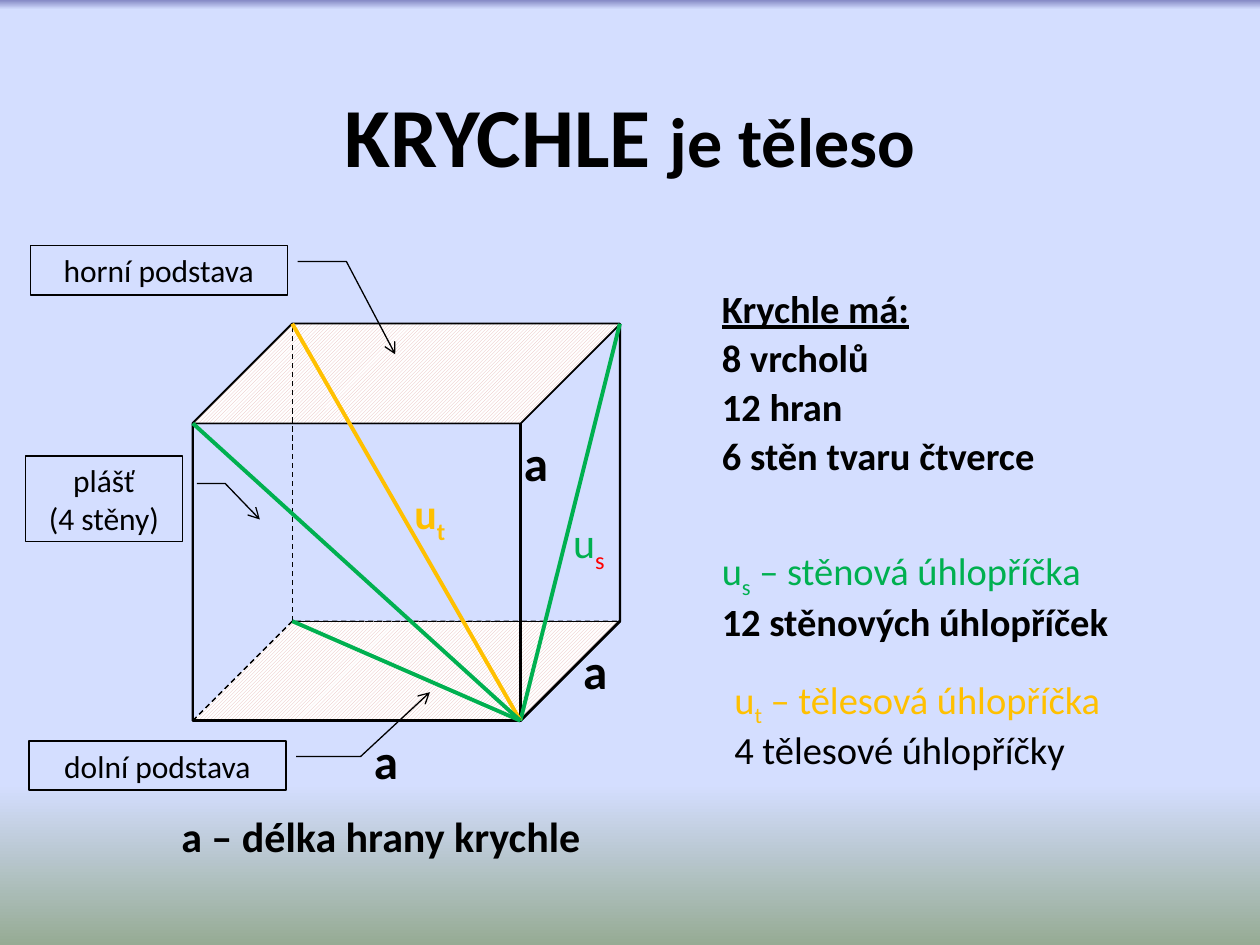
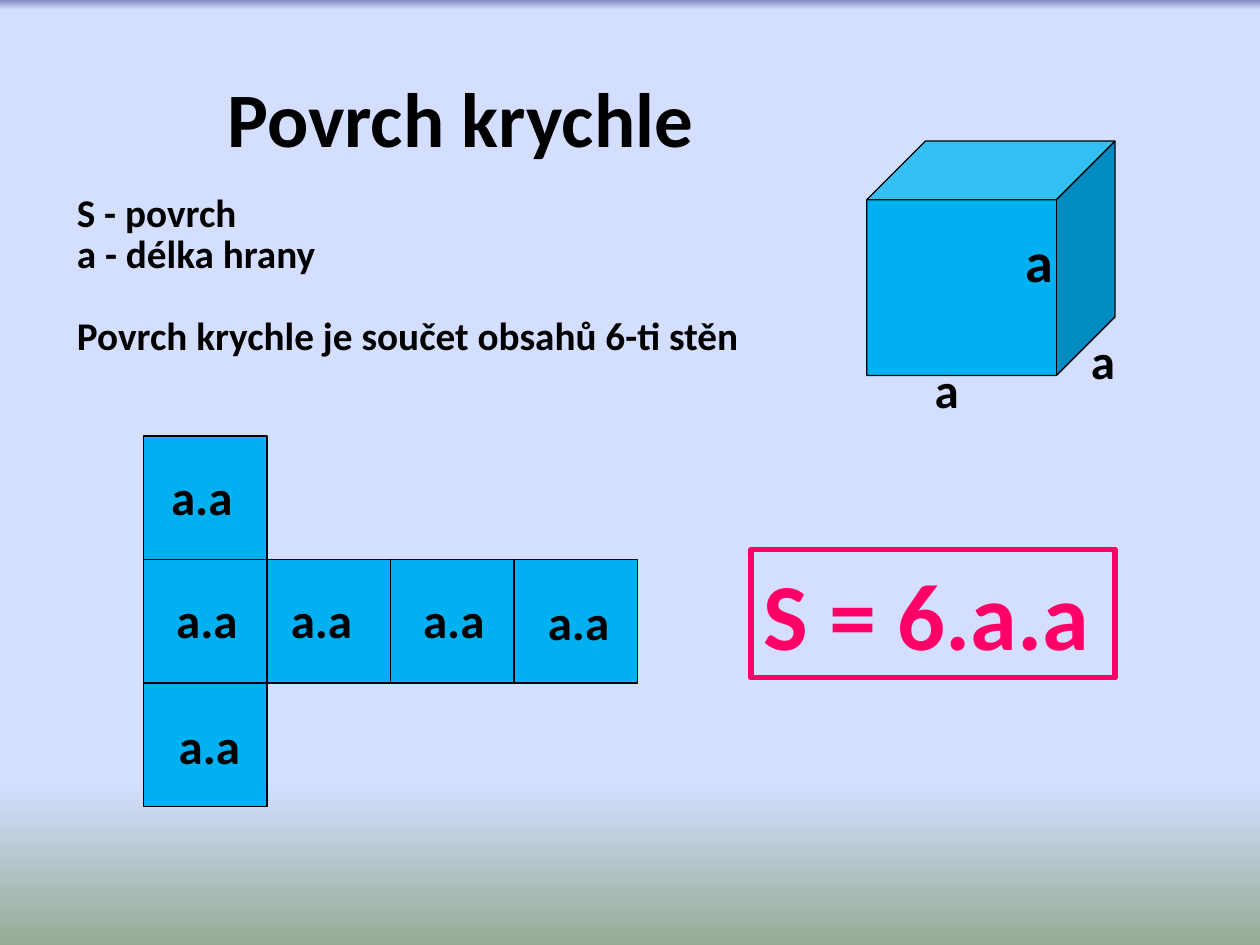
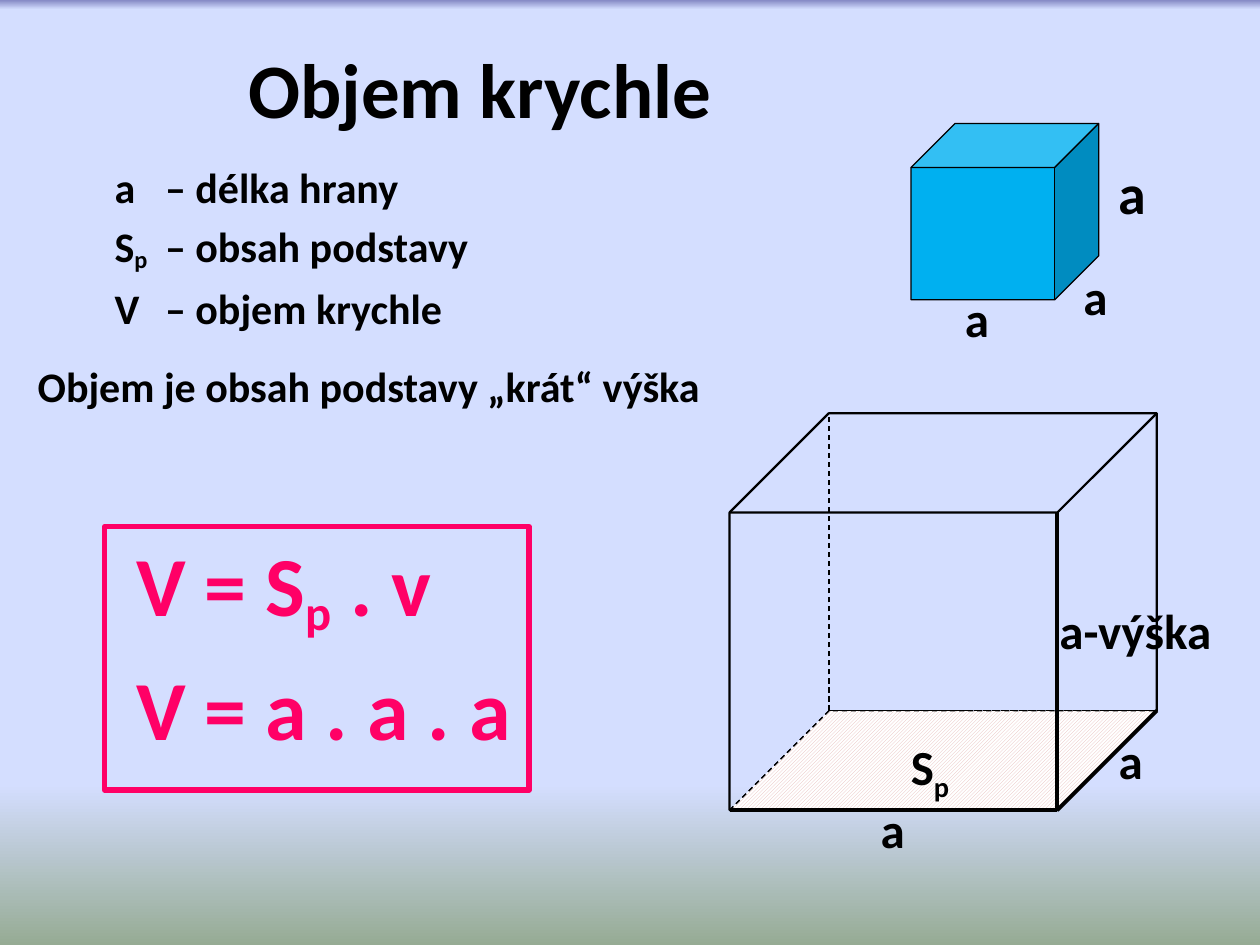
from dataclasses import dataclass
from typing import Optional

import pptx
import pptx.dml.color
import pptx.enum.dml
import pptx.enum.shapes
import pptx.enum.text
import pptx.oxml
import pptx.oxml.ns
import pptx.util
from pptx.util import Inches

SHAPE = pptx.enum.shapes.MSO_SHAPE
ALIGN = pptx.enum.text.PP_ALIGN
ANCHOR = pptx.enum.text.MSO_ANCHOR


@dataclass(frozen=True)
class Theme:
    font: str = "Calibri"
    black: str = "000000"
    white: str = "FFFFFF"
    green: str = "00B050"
    amber: str = "FFC000"
    red: str = "FF0000"
    pink: str = "FF0066"
    blue: str = "00B0F0"
    hatch: str = "E6B9B8"
    backdrop: tuple = ((0, "8488C4"), (1, "D4DEFF"), (83, "D4DEFF"), (100, "96AB94"))
    title: float = 44
    title_large: float = 48
    title_small: float = 40
    surface_formula: float = 54
    volume_formula: float = 48
    height_label: float = 32
    label: float = 28
    text: float = 24
    surface_text: float = 22.4
    facts: float = 22
    callout: float = 18
    thin: float = 0.75
    edge: float = 1.25
    strong: float = 1.5
    heavy: float = 2.25
    frame: float = 3


@dataclass(frozen=True)
class Span:
    text: str
    size: Optional[float] = None
    color: Optional[str] = None
    bold: Optional[bool] = None
    underline: bool = False
    baseline: int = 0


def rgb(value):
    return pptx.dml.color.RGBColor.from_string(value)


class Lesson:
    def __init__(self, theme):
        self.theme = theme
        self.deck = pptx.Presentation()
        self.deck.slide_width, self.deck.slide_height = Inches(10), Inches(7.5)
        self.slide = None
        self.paint_backdrop()

    def paint_backdrop(self):
        master = self.deck.slide_master
        fill = master.background.fill
        fill.gradient()
        fill.gradient_angle = 270
        stops = master.element.xpath("p:cSld/p:bg//a:gsLst")[0]
        for stop in list(stops):
            stops.remove(stop)
        for percent, color in self.theme.backdrop:
            stops.append(pptx.oxml.parse_xml(
                f'<a:gs {pptx.oxml.ns.nsdecls("a")} pos="{percent * 1000}">'
                f'<a:srgbClr val="{color}"/></a:gs>'))

    def new_slide(self):
        self.slide = self.deck.slides.add_slide(self.deck.slide_layouts[1])

    def place(self, box, at):
        box.left, box.top, box.width, box.height = (Inches(value) for value in at)
        return box

    def typeset(self, box, paragraphs, size, color=None, bold=True, spacing=0.9,
                before=0.2, align=ALIGN.LEFT, anchor=ANCHOR.TOP, hanging=0):
        frame = box.text_frame
        frame.word_wrap = True
        frame.auto_size = pptx.enum.text.MSO_AUTO_SIZE.NONE
        frame.vertical_anchor = anchor
        for index, content in enumerate(paragraphs):
            para = frame.add_paragraph() if index else frame.paragraphs[0]
            para.alignment = align
            para.line_spacing = spacing
            para.space_before = pptx.util.Pt(before * size)
            properties = para._p.get_or_add_pPr()
            properties.set("marL", str(Inches(hanging)))
            properties.set("indent", str(-Inches(hanging)))
            properties.append(pptx.oxml.parse_xml(
                f'<a:buNone {pptx.oxml.ns.nsdecls("a")}/>'))
            for span in [Span(content)] if isinstance(content, str) else content:
                run = para.add_run()
                run.text = span.text
                run.font.name = self.theme.font
                run.font.size = pptx.util.Pt(span.size or size)
                run.font.bold = bold if span.bold is None else span.bold
                run.font.underline = span.underline
                run.font.color.rgb = rgb(span.color or color or self.theme.black)
                if span.baseline:
                    run.font._element.set("baseline", str(span.baseline * 1000))
        return box

    def title(self, at, content):
        box = self.place(self.slide.shapes.title, at)
        self.typeset(box, [content], self.theme.title, spacing=1, before=0,
                     align=ALIGN.CENTER, anchor=ANCHOR.MIDDLE)

    def body(self, at, paragraphs, size, **style):
        box = self.place(self.slide.placeholders[1], at)
        return self.typeset(box, paragraphs, size, **style)

    def text(self, at, paragraphs, size, **style):
        box = self.slide.shapes.add_textbox(*(Inches(value) for value in at))
        return self.typeset(box, paragraphs, size, **style)

    def edge_labels(self, places, width, height, size):
        for left, top in places:
            self.text((left, top, width, height), ["a"], size)

    def shape(self, kind, at, width, fill=None, color=None, adjustments=()):
        shape = self.slide.shapes.add_shape(kind, *(Inches(value) for value in at))
        shape.shadow.inherit = False
        for index, value in enumerate(adjustments):
            shape.adjustments[index] = value
        if fill:
            shape.fill.solid()
            shape.fill.fore_color.rgb = rgb(fill)
        else:
            shape.fill.background()
        shape.line.color.rgb = rgb(color or self.theme.black)
        shape.line.width = pptx.util.Pt(width)
        return shape

    def hatched_face(self, at, slant, dashed=False):
        face = self.shape(SHAPE.PARALLELOGRAM, at, self.theme.thin, adjustments=[slant])
        face.fill.patterned()
        face.fill.pattern = pptx.enum.dml.MSO_PATTERN.LIGHT_UPWARD_DIAGONAL
        face.fill.fore_color.rgb = rgb(self.theme.hatch)
        face.fill.back_color.rgb = rgb(self.theme.white)
        if dashed:
            face.line.dash_style = pptx.enum.dml.MSO_LINE.DASH

    def line(self, start, end, width, color=None, dashed=False):
        line = self.slide.shapes.add_connector(
            pptx.enum.shapes.MSO_CONNECTOR.STRAIGHT,
            *(Inches(value) for value in (*start, *end)))
        line.line.color.rgb = rgb(color or self.theme.black)
        line.line.width = pptx.util.Pt(width)
        if dashed:
            line.line.dash_style = pptx.enum.dml.MSO_LINE.DASH
        line.element.spPr.append(pptx.oxml.parse_xml(
            f'<a:effectLst {pptx.oxml.ns.nsdecls("a")}/>'))

    def callout(self, at, paragraphs, adjustments):
        box = self.shape(SHAPE.LINE_CALLOUT_2, at, self.theme.thin, adjustments=adjustments)
        box.element.spPr.get_or_add_ln().append(pptx.oxml.parse_xml(
            f'<a:tailEnd {pptx.oxml.ns.nsdecls("a")} type="arrow"/>'))
        self.typeset(box, paragraphs, self.theme.callout, bold=False, spacing=1, before=0,
                     align=ALIGN.CENTER, anchor=ANCHOR.MIDDLE)

    def formula(self, at, paragraphs, size, inset=0.1):
        box = self.shape(SHAPE.RECTANGLE, at, self.theme.frame, color=self.theme.pink)
        box.text_frame.margin_left = Inches(inset)
        self.typeset(box, paragraphs, size, color=self.theme.pink, spacing=1)

    def solid_cube(self, at):
        self.shape(SHAPE.CUBE, at, self.theme.thin, fill=self.theme.blue, adjustments=[0.25])

    def wire_cube(self, left, top, strong, hatched_top=False):
        width, height, depth = 3.39, 3.15, 0.79
        right, bottom = left + width, top + height
        front_right = right - depth
        corners = {
            "front_top_left": (left, top + depth),
            "front_top_right": (front_right, top + depth),
            "front_left": (left, bottom),
            "front_right": (front_right, bottom),
            "back_top_left": (left + depth, top),
            "back_top_right": (right, top),
            "back_left": (left + depth, bottom - depth),
            "back_right": (right, bottom - depth),
        }
        self.hatched_face((left, bottom - depth, width, depth), 1, dashed=True)
        self.shape(SHAPE.CUBE, (left, top, width, height), self.theme.edge, adjustments=[0.25])
        if hatched_top:
            self.hatched_face((left, top, width, depth), 1)
        for end in ("back_top_left", "back_right", "front_left"):
            self.line(corners["back_left"], corners[end], self.theme.thin, dashed=True)
        for end in ("front_top_right", "back_right", "front_left"):
            self.line(corners["front_right"], corners[end], strong)
        return corners


def build_solid(lesson):
    theme = lesson.theme
    lesson.new_slide()
    lesson.title((0.5, 0.44, 9, 1.25), [Span("KRYCHLE ", theme.title_large),
                                        Span("je těleso", theme.title_small)])
    corners = lesson.wire_cube(1.53, 2.57, theme.strong, hatched_top=True)
    for end, color in (("back_top_right", theme.green), ("back_top_left", theme.amber),
                       ("front_top_left", theme.green), ("back_left", theme.green)):
        lesson.line(corners["front_right"], corners[end], theme.heavy, color)
    lesson.callout((0.24, 1.95, 2.04, 0.39), ["horní podstava"],
                   (0.32, 1.04, 0.32, 1.23, 2.21, 1.42))
    lesson.callout((0.2, 3.62, 1.25, 0.68), ["plášť", "(4 stěny)"],
                   (0.32, 1.09, 0.32, 1.27, 0.74, 1.49))
    lesson.callout((0.23, 5.88, 2.04, 0.39), ["dolní podstava"],
                   (0.32, 1.04, 0.32, 1.29, -0.99, 1.56))
    lesson.edge_labels([(4.06, 3.44), (4.53, 5.09), (2.87, 5.8)], 0.47, 0.66, theme.label)
    lesson.text((1.34, 6.43, 3.62, 0.47), ["a – délka hrany krychle"], theme.text)
    lesson.text((4.45, 4.06, 0.63, 0.66),
                [[Span("u"), Span("s", color=theme.red, baseline=-25)]],
                theme.text, color=theme.green, bold=False)
    lesson.text((3.19, 3.83, 0.5, 0.66), [[Span("u"), Span("t", baseline=-25)]],
                theme.text, color=theme.amber)
    lesson.body((5.63, 2.25, 3.62, 1.65),
                [[Span("Krychle má:", underline=True)], "8 vrcholů", "12 hran",
                 "6 stěn tvaru čtverce"], theme.facts)
    for at, index, name, count, color, bold in (
            ((5.63, 4.3, 4.29, 1.12), "s", " – stěnová úhlopříčka",
             "12 stěnových úhlopříček", theme.green, True),
            ((5.73, 5.32, 4.29, 1.12), "t", " – tělesová úhlopříčka",
             "4 tělesové úhlopříčky", theme.amber, False)):
        lesson.text(at, [[Span("u"), Span(index, baseline=-25), Span(name)],
                         [Span(count, color=theme.black, bold=bold)]],
                    theme.facts, color=color, bold=False)


def build_surface(lesson):
    theme = lesson.theme
    lesson.new_slide()
    lesson.title((0.5, 0.3, 6.31, 1.25), "Povrch krychle")
    body = lesson.body((0.51, 1.55, 5.59, 1.66),
                       ["S - povrch", "a - délka hrany",
                        "Povrch krychle je součet obsahů 6-ti stěn"],
                       theme.surface_text, spacing=0.7)
    body.text_frame.paragraphs[-1].space_before = pptx.util.Pt(28)
    lesson.formula((5.96, 4.36, 2.89, 1.02), ["S = 6.a.a"], theme.surface_formula)

    side = 0.98
    net = [(0, 0), (0, 1), (0, 2), (1, 1), (2, 1), (3, 1)]
    for column, row in net:
        lesson.shape(SHAPE.RECTANGLE,
                     (1.14 + column * side, 3.46 + row * side, side, side),
                     theme.thin, fill=theme.blue)
    for left, top in ((1.26, 3.71), (1.3, 4.68), (1.32, 5.68),
                      (2.21, 4.68), (3.26, 4.68), (4.25, 4.7)):
        lesson.text((left, top, 0.83, 0.47), ["a.a"], theme.label)

    lesson.solid_cube((6.88, 1.12, 1.97, 1.86))
    lesson.edge_labels([(7.32, 2.86), (8.56, 2.63)], 0.58, 0.7, theme.label)
    lesson.edge_labels([(8.04, 1.81)], 0.58, 0.7, theme.height_label)


def build_volume(lesson):
    theme = lesson.theme
    base_area = [Span("S"), Span("p", baseline=-16)]
    lesson.new_slide()
    lesson.title((0.81, 0.07, 6, 1.25), "Objem krychle")
    lesson.body((0.81, 1.23, 3.39, 1.64),
                ["a\t– délka hrany", [*base_area, Span("\t– obsah podstavy")],
                 "V\t– objem krychle"], theme.text, spacing=1, hanging=0.4)
    lesson.text((0.2, 2.81, 5.75, 0.71), ["Objem je obsah podstavy „krát“ výška"],
                theme.text, spacing=1)
    lesson.formula((0.83, 4.18, 3.37, 2.09),
                   [[Span("V = "), *base_area, Span(" . v")], "V = a . a . a"],
                   theme.volume_formula, inset=0.25)
    lesson.wire_cube(5.79, 3.28, theme.heavy)
    lesson.text((8.31, 4.77, 1.69, 0.47), ["a-výška"], theme.label)
    lesson.text((7.13, 5.8, 0.71, 0.55), [[Span("S"), Span("p", baseline=-25)]], theme.label)
    lesson.edge_labels([(8.78, 5.8), (6.89, 6.35)], 0.47, 0.47, theme.label)

    lesson.solid_cube((7.23, 0.98, 1.49, 1.4))
    lesson.edge_labels([(7.56, 2.29), (8.5, 2.12)], 0.44, 0.52, theme.label)
    lesson.edge_labels([(8.78, 1.27)], 0.44, 0.52, theme.height_label)


def main():
    lesson = Lesson(Theme())
    build_solid(lesson)
    build_surface(lesson)
    build_volume(lesson)
    lesson.deck.save("out.pptx")


if __name__ == "__main__":
    main()
